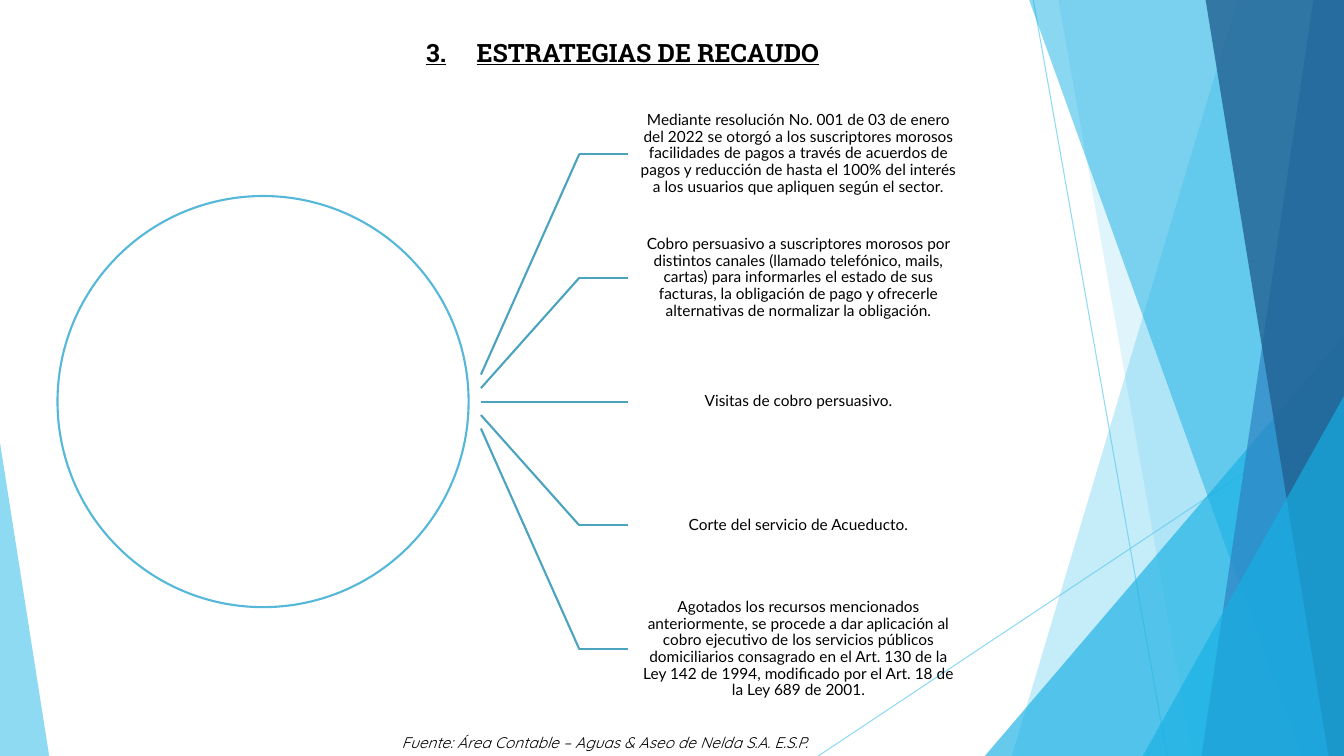
"""Build the slide on debt collection strategies."""
import lxml.etree
import pptx
import pptx.dml.color
import pptx.enum.shapes
import pptx.enum.text
import pptx.oxml.ns
import pptx.util

Cm = pptx.util.Cm
Pt = pptx.util.Pt
qn = pptx.oxml.ns.qn
SHAPE = pptx.enum.shapes.MSO_SHAPE
STRAIGHT = pptx.enum.shapes.MSO_CONNECTOR.STRAIGHT
ALIGN = pptx.enum.text.PP_ALIGN
ANCHOR = pptx.enum.text.MSO_ANCHOR

COLORS = {
    "white": "FFFFFF", "text": "000000", "sky": "5FCBEF", "cyan": "17B0E4",
    "blue": "2E83C3", "navy": "226292", "circle": "56B8D9", "ray": "4CA3BF",
}
TITLE = [("3.", True), ("\t", False), ("ESTRATEGIAS DE RECAUDO", True)]
SOURCE = "Fuente: Área Contable – Aguas & Aseo de Nelda S.A. E.S.P."
STRATEGIES = [
    "Mediante resolución No. 001 de 03 de enero del 2022 se otorgó a los suscriptores "
    "morosos facilidades de pagos a través de acuerdos de pagos y reducción de hasta el "
    "100% del interés a los usuarios que apliquen según el sector.",
    "Cobro persuasivo a suscriptores morosos por distintos canales (llamado telefónico, "
    "mails, cartas) para informarles el estado de sus facturas, la obligación de pago y "
    "ofrecerle alternativas de normalizar la obligación.",
    "Visitas de cobro persuasivo.",
    "Corte del servicio de Acueducto.",
    "Agotados los recursos mencionados anteriormente, se procede a dar aplicación al "
    "cobro ejecutivo de los servicios públicos domiciliarios consagrado en el Art. 130 "
    "de la Ley 142 de 1994, modificado por el Art. 18 de la Ley 689 de 2001.",
]
FORMATS = {
    "title": {"name": "Roboto Slab", "size": Pt(18), "bold": True},
    "source": {"name": "Quicksand", "size": Pt(11), "italic": True},
    "strategy": {"name": "Lato", "size": Pt(11)},
}
WIDTH, HEIGHT = 33.87, 19.05
THIN_LINES = [(26.04, 0, 29.41, HEIGHT), (WIDTH, 10.24, 20.62, HEIGHT)]
FACETS = [
    ("band", (31.19, 25.5), "sky", 36),
    ("band", (26.67, 30.05), "sky", 20),
    ("triangle", (24.82, 8.46, 9.05, 1), "cyan", 66),
    ("band", (25.93, 32.79), "cyan", 50),
    ("band", (33.1, 30.28), "blue", 70),
    ("band", (30.38, 33.48), "navy", 80),
    ("triangle", (28.8, 9.98, 5.07, 1), "cyan", 66),
    ("triangle", (0, 11.15, 1.24, 0), "sky", 70),
]
CENTER_Y, DIAMETER, CIRCLE_LEFT = 10.12, 10.36, 1.45
RAY_START, RAY_BEND, BOX_LEFT = 12.12, 14.6, 15.82
RAY_GAP, ROW_HEIGHT, BOX_WIDTH = 0.34, 3.12, 8.61

deck = pptx.Presentation()
deck.slide_width, deck.slide_height = Cm(WIDTH), Cm(HEIGHT)
slide = deck.slides.add_slide(deck.slide_layouts[6])
shapes = slide.shapes


def rgb(name):
    """Return a named colour."""
    return pptx.dml.color.RGBColor.from_string(COLORS[name])


def set_alpha(part, percent):
    """Make the colours of a part translucent."""
    for color in list(part.element.spPr.iter(qn("a:srgbClr"))):
        lxml.etree.SubElement(color, qn("a:alpha")).set("val", str(percent * 1000))


def add_line(x1, y1, x2, y2, color, weight):
    """Draw a straight line without shadow."""
    line = shapes.add_connector(STRAIGHT, Cm(x1), Cm(y1), Cm(x2), Cm(y2))
    line.line.color.rgb = rgb(color)
    line.line.width = Pt(weight)
    lxml.etree.SubElement(line.element.spPr, qn("a:effectLst"))
    return line


def add_text(bounds, runs, style, align, spacing, anchor=ANCHOR.TOP, inset=0.25):
    """Add a text box with one paragraph of (text, underlined) runs."""
    box = shapes.add_textbox(*map(Cm, bounds))
    frame = box.text_frame
    paragraph = frame.paragraphs[0]
    settings = {"word_wrap": True, "vertical_anchor": anchor,
                "margin_left": Cm(inset), "margin_right": Cm(inset)}
    for key, value in settings.items():
        setattr(frame, key, value)
    paragraph.alignment, paragraph.line_spacing = align, spacing
    for text, underlined in runs:
        run = paragraph.add_run()
        run.text = text
        for key, value in FORMATS[style].items():
            setattr(run.font, key, value)
        run.font.underline = underlined
        run.font.color.rgb = rgb("text")
    return box


def add_facet(kind, geometry, color, alpha):
    """Draw one translucent piece of the side decoration."""
    if kind == "band":
        top_x, bottom_x = geometry
        outline = shapes.build_freeform(Cm(top_x), Cm(-0.02), scale=1.0)
        corners = [(WIDTH, -0.02), (WIDTH, HEIGHT), (bottom_x, HEIGHT)]
        outline.add_line_segments([(Cm(x), Cm(y)) for x, y in corners], close=True)
        facet = outline.convert_to_shape()
    else:
        left, top, width, apex = geometry
        facet = shapes.add_shape(SHAPE.ISOSCELES_TRIANGLE, Cm(left), Cm(top),
                                 Cm(width), Cm(HEIGHT - top))
        facet.adjustments[0] = apex
    facet.shadow.inherit = False
    facet.fill.solid()
    facet.fill.fore_color.rgb = rgb(color)
    facet.line.fill.background()
    set_alpha(facet, alpha)


for ends in THIN_LINES:
    set_alpha(add_line(*ends, "sky", 0.75), 70)
for facet_values in FACETS:
    add_facet(*facet_values)

title = add_text((10.49, 0.69, 11.43, 1.09), TITLE, "title", ALIGN.LEFT, 1.15)
tabs = lxml.etree.SubElement(title.text_frame.paragraphs[0]._p.get_or_add_pPr(), qn("a:tabLst"))
lxml.etree.SubElement(tabs, qn("a:tab"), pos=str(Cm(1.27)), algn="l")
add_text((5.38, 18.31, 19.74, 0.76), [(SOURCE, False)], "source", ALIGN.CENTER, 1.07)

circle = shapes.add_shape(SHAPE.OVAL, Cm(CIRCLE_LEFT), Cm(CENTER_Y - DIAMETER / 2),
                          Cm(DIAMETER), Cm(DIAMETER))
circle.shadow.inherit = False
circle.fill.solid()
circle.fill.fore_color.rgb = rgb("white")
circle.line.color.rgb = rgb("circle")
circle.line.width = Pt(1.5)

for index, strategy in enumerate(STRATEGIES):
    offset = index - (len(STRATEGIES) - 1) / 2
    row_y = CENTER_Y + offset * ROW_HEIGHT
    add_line(RAY_START, CENTER_Y + offset * RAY_GAP, RAY_BEND, row_y, "ray", 1.5)
    branch = add_line(RAY_BEND, row_y, BOX_LEFT, row_y, "ray", 1.5)
    strategy_box = add_text((BOX_LEFT, row_y - ROW_HEIGHT / 2, BOX_WIDTH, ROW_HEIGHT),
                            [(strategy, False)], "strategy", ALIGN.CENTER, 0.9,
                            ANCHOR.MIDDLE, 0.23)
    branch.end_connect(strategy_box, 1)

deck.save("out.pptx")
